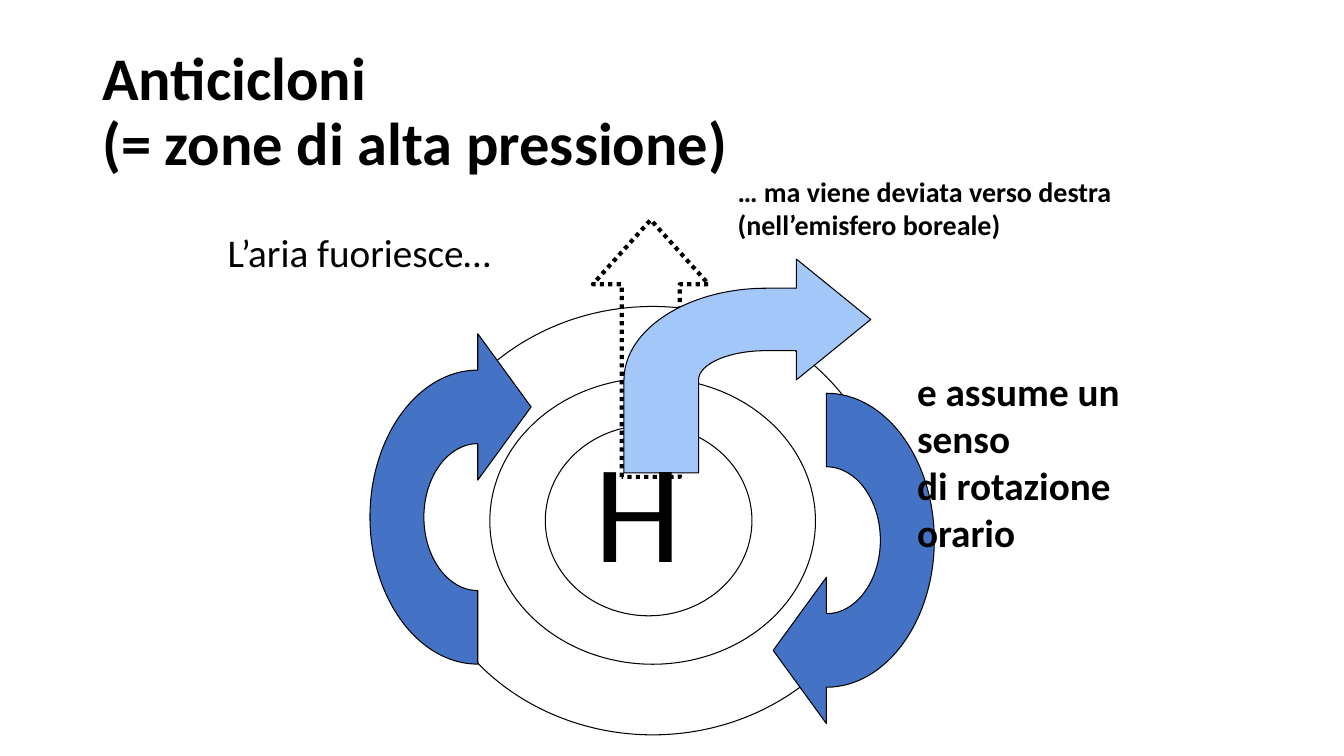
from dataclasses import dataclass

from pptx import Presentation
from pptx.dml.color import RGBColor
from pptx.enum.dml import MSO_LINE
from pptx.enum.shapes import MSO_SHAPE
from pptx.enum.text import MSO_ANCHOR
from pptx.oxml.xmlchemy import OxmlElement
from pptx.util import Pt

ELLIPSE, ARROW = MSO_SHAPE.OVAL, MSO_SHAPE.RIGHT_ARROW
DOTTED = MSO_LINE.ROUND_DOT  # written as sysDot
TOP, MIDDLE = MSO_ANCHOR.TOP, MSO_ANCHOR.MIDDLE
QUARTER = 0.55  # Bezier handle length for a quarter ellipse


@dataclass(frozen=True)
class Theme:
    font: str = "Calibri"
    ink: RGBColor = RGBColor(0x00, 0x00, 0x00)
    rotation: RGBColor = RGBColor(0x44, 0x72, 0xC4)
    deviation: RGBColor = RGBColor(0xA4, 0xC7, 0xFA)
    title: float = 43.2
    label: float = 28
    note: float = 20
    high: float = 100
    thin: float = 0.75
    dotted: float = 3


theme = Theme()
prs = Presentation()
prs.slide_width, prs.slide_height = Pt(960), Pt(540)
s = prs.slides.add_slide(prs.slide_layouts[6])


def style(sp, fill=None, weight=theme.thin):
    sp.shadow.inherit = False
    if fill is None:
        sp.fill.background()
    else:
        sp.fill.solid()
        sp.fill.fore_color.rgb = fill
    sp.line.color.rgb = theme.ink
    sp.line.width = Pt(weight)


def add_outline(steps, fill):
    """Draw steps: (x, y) is a line, (corner x, corner y, x, y) a quarter ellipse."""
    points, curves = [steps[0]], []
    for step in steps[1:]:
        if len(step) == 4:
            (x0, y0), (cx, cy, x1, y1) = points[-1], step
            curves.append(len(points) - 1)
            points += [(x + QUARTER * (cx - x), y + QUARTER * (cy - y))
                       for x, y in [(x0, y0), (x1, y1)]]
        points.append(step[-2:])
    points = [(Pt(x), Pt(y)) for x, y in points]
    builder = s.shapes.build_freeform(*points[0])
    builder.add_line_segments(points[1:], close=True)
    sp = builder.convert_to_shape()
    lines = sp._element.xpath(".//a:lnTo")
    for i in curves:
        curve = OxmlElement("a:cubicBezTo")
        lines[i].addprevious(curve)
        for line in lines[i:i + 3]:
            curve.append(line[0])
            line.getparent().remove(line)
    style(sp, fill)


# Isobars
for x, y, w, h in [(389.5, 303.8, 147.6, 136.1),
                   (349.9, 270, 232.6, 204.5),
                   (298.8, 218.9, 334.8, 306)]:
    style(s.shapes.add_shape(ELLIPSE, Pt(x), Pt(y), Pt(w), Pt(h)))

# Undeviated outflow, pointing up
sp = s.shapes.add_shape(ARROW, Pt(373), Pt(207.4), Pt(183.6), Pt(82.8))
sp.rotation = 270
sp.adjustments[0], sp.adjustments[1] = 0.5, 0.556
style(sp, weight=theme.dotted)
sp.line.dash_style = DOTTED

# Texts: box, size, bold, wrap, anchor, line spacing, paragraphs as lists of lines
title = ((66, 28.8, 828, 104.4), theme.title, True, True, MIDDLE, 0.9,
         [["Anticicloni ", "(= zone di alta pressione)"]])
outflow = ((155.5, 159.8, 204.5, 41), theme.label, False, False, TOP, 1,
           [["L’aria fuoriesce…"]])
deviation = ((519.8, 121, 283.7, 55.4), theme.note, True, False, TOP, 1,
             [["… ma viene deviata verso destra"], ["(nell’emisfero boreale)"]])
rotation = ((648, 258.5, 167, 143.3), theme.label, True, False, TOP, 1,
            [["e assume un"], ["senso"], ["di rotazione"], ["orario"]])
high = ((417.6, 298.1, 96.5, 127.4), theme.high, False, True, TOP, 1, [["H"]])

# Deviated outflow and clockwise circulation
bent_arrow = [
    (622, 228.2), (568.8, 185), (568.8, 205.9), (547.2, 205.9),
    (445.7, 205.9, 445.7, 271.4), (445.7, 337.7), (499, 337.7), (499, 271.4),
    (499, 250.5, 547.2, 250.5), (568.8, 250.5), (568.8, 271.4),
]
left_arrow = [
    (341.3, 316.9), (302.8, 316.9, 302.8, 369.4), (302.8, 421.9, 341.3, 421.9),
    (341.3, 474.4), (264.3, 474.4, 264.3, 369.4), (264.3, 264.4, 341.3, 264.4),
    (341.3, 238.4), (379.4, 290.7), (341.3, 343),
]
right_arrow = [tuple((755.3 if i % 2 else 931.7) - v for i, v in enumerate(step))
               for step in left_arrow]
add_outline(bent_arrow, theme.deviation)
add_outline(left_arrow, theme.rotation)
add_outline(right_arrow, theme.rotation)

for box, size, bold, wrap, anchor, spacing, paragraphs in [
        title, outflow, deviation, rotation, high]:
    tf = s.shapes.add_textbox(*map(Pt, box)).text_frame
    tf.word_wrap, tf.vertical_anchor = wrap, anchor
    for i, lines in enumerate(paragraphs):
        p = tf.add_paragraph() if i else tf.paragraphs[0]
        p.line_spacing = spacing
        for j, line in enumerate(lines):
            if j:
                p.add_line_break()
            r = p.add_run()
            r.text = line
            r.font.name, r.font.size, r.font.bold = theme.font, Pt(size), bold
            r.font.color.rgb = theme.ink

prs.save("out.pptx")
